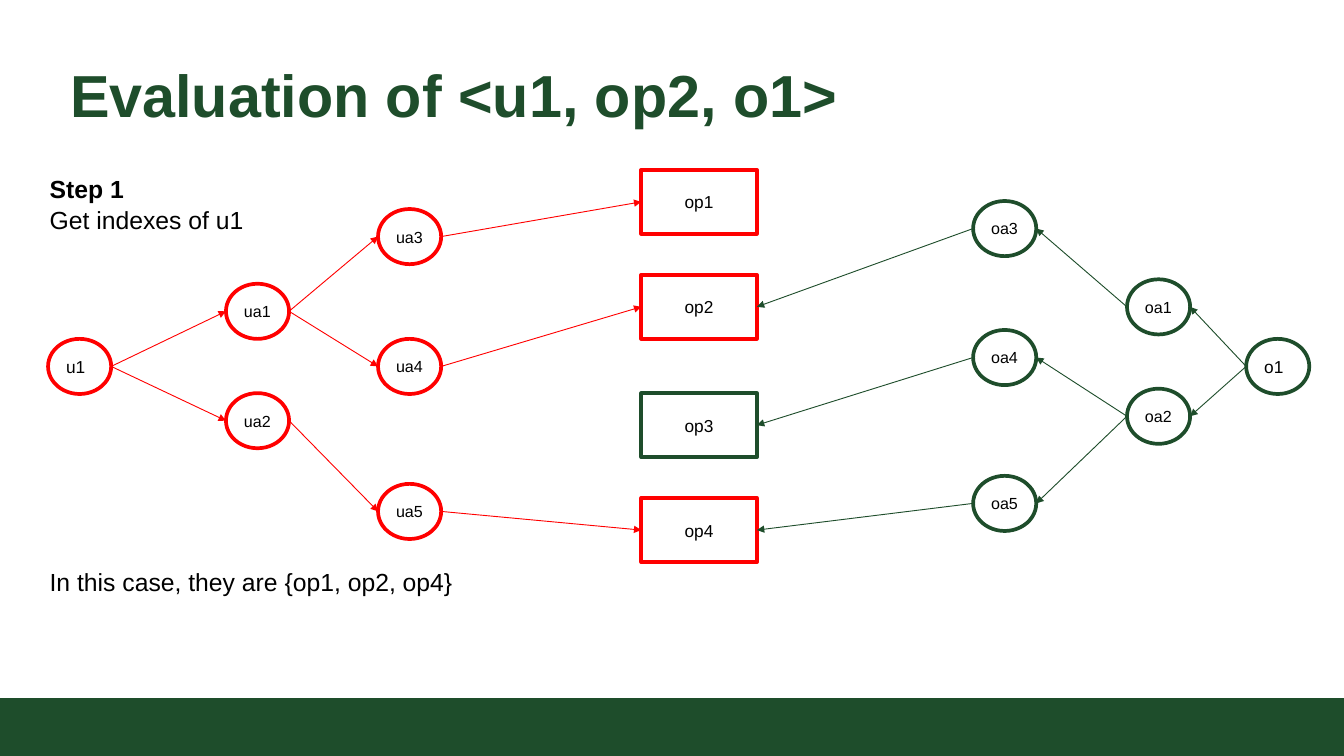
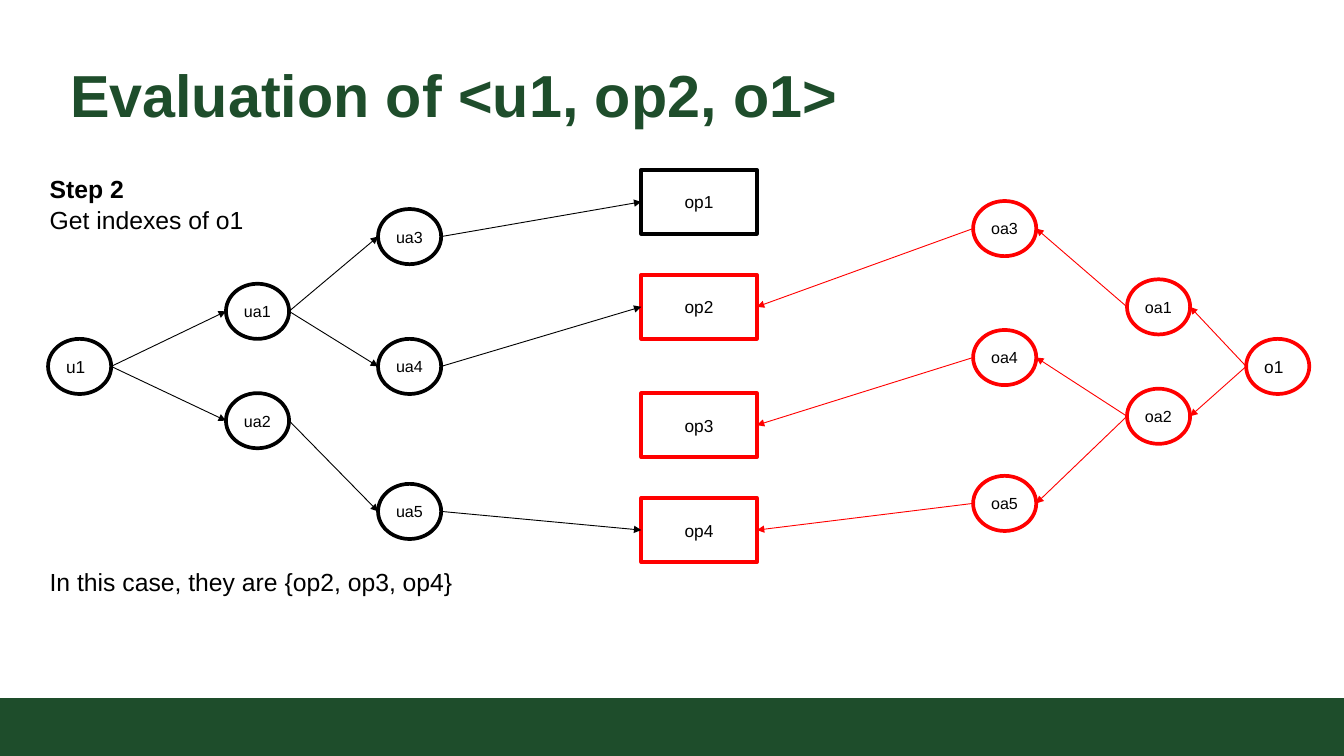
"""Build two slides that trace the access graph from u1 and from o1."""
from lxml import etree
from pptx import Presentation
from pptx.dml.color import RGBColor
from pptx.enum import shapes, text
from pptx.oxml.ns import qn
from pptx.util import Inches, Pt

HUES = {"green": "1E4D2B", "red": "FF0000", "black": "000000"}
FACE = "Arial"
WIDE, HIGH = 15.11, 8.5
BAND = 7.85
TITLE = "Evaluation of <u1, op2, o1>"
STEPS = [
    {"name": "Step 1", "root": "u1", "ops": ["op1", "op2", "op4"], "rest": "green"},
    {"name": "Step 2", "root": "o1", "ops": ["op2", "op3", "op4"], "rest": "black"},
]

NODE, BOX = (0.71, 0.62), (1.3, 0.72)
COLS = [
    ("u1", 0.54, {"u1": 3.81}),
    ("u1", 2.54, {"ua1": 3.19, "ua2": 4.42}),
    ("u1", 4.25, {"ua3": 2.35, "ua4": 3.81, "ua5": 5.44}),
    ("o1", 14.01, {"o1": 3.81}),
    ("o1", 12.67, {"oa1": 3.14, "oa2": 4.37}),
    ("o1", 10.94, {"oa3": 2.26, "oa4": 3.71, "oa5": 5.35}),
    ("op", 7.21, {"op1": 1.91, "op2": 3.09, "op3": 4.42, "op4": 5.6}),
]
LINKS = {
    "u1": ["u1 ua1", "u1 ua2", "ua1 ua3", "ua1 ua4", "ua2 ua5",
           "ua3 op1", "ua4 op2", "ua5 op4"],
    "o1": ["o1 oa1", "o1 oa2", "oa1 oa3", "oa2 oa5", "oa2 oa4",
           "oa4 op3", "oa5 op4", "oa3 op2"],
}
SPOTS = {name: (x, y, *(BOX if side == "op" else NODE))
         for side, x, rows in COLS for name, y in rows.items()}


def paint(hue):
    return RGBColor.from_string(HUES[hue])


def write(shape, lines, size, hue="black", anchor="TOP", align="LEFT", space=1.0, right=0.1):
    """Fill a shape with (words, bold) lines."""
    frame = shape.text_frame
    look = {"word_wrap": True, "vertical_anchor": getattr(text.MSO_ANCHOR, anchor),
            "margin_left": Inches(0.1), "margin_right": Inches(right),
            "margin_top": Inches(0.1), "margin_bottom": Inches(0.1)}
    for key, value in look.items():
        setattr(frame, key, value)
    for i, (words, bold) in enumerate(lines):
        para = frame.add_paragraph() if i else frame.paragraphs[0]
        para.alignment = getattr(text.PP_ALIGN, align)
        para.line_spacing = space
        run = para.add_run()
        run.text = words
        for key, value in {"name": FACE, "size": Pt(size), "bold": bold}.items():
            setattr(run.font, key, value)
        run.font.color.rgb = paint(hue)


def label(slide, spot, lines, size, **form):
    write(slide.shapes.add_textbox(*map(Inches, spot)), lines, size, **form)


def solid(slide, kind, spot):
    shape = slide.shapes.add_shape(kind, *map(Inches, spot))
    shape.shadow.inherit = False
    return shape


def base(deck):
    """Add a slide with the shared band and title."""
    slide = deck.slides.add_slide(deck.slide_layouts[6])
    band = solid(slide, shapes.MSO_SHAPE.RECTANGLE, (0, BAND, WIDE, HIGH - BAND))
    band.fill.solid()
    band.fill.fore_color.rgb = paint("green")
    band.line.fill.background()
    label(slide, (0.69, 0.44, 13.74, 1.11), [(TITLE, True)], 48,
          hue="green", anchor="BOTTOM")
    return slide


def vertex(slide, name, is_op, hue):
    kind = shapes.MSO_SHAPE.RECTANGLE if is_op else shapes.MSO_SHAPE.OVAL
    shape = solid(slide, kind, SPOTS[name])
    shape.fill.background()
    shape.line.color.rgb = paint(hue)
    shape.line.width = Pt(3)
    write(shape, [(name, False)], 13 if len(name) == 3 and not is_op else 14,
          anchor="MIDDLE", align="CENTER" if is_op else "LEFT",
          right=0.1 if is_op else 0.05)


def arrow(slide, link, hue):
    """Join the facing sides of two vertices."""
    (ax, ay, aw, ah), (bx, by, bw, bh) = (SPOTS[name] for name in link.split())
    start, end = (ax + aw, bx) if ax < bx else (ax, bx + bw)
    ends = (start, ay + ah / 2, end, by + bh / 2)
    line = slide.shapes.add_connector(shapes.MSO_CONNECTOR.STRAIGHT, *map(Inches, ends))
    line.line.color.rgb = paint(hue)
    line.line.width = Pt(0.75)
    etree.SubElement(line.line._get_or_add_ln(), qn("a:tailEnd"), type="triangle")
    etree.SubElement(line._element.spPr, qn("a:effectLst"))


def graph(slide, step):
    for side, _, rows in COLS:
        for name in rows:
            lit = name in step["ops"] or side == step["root"]
            vertex(slide, name, side == "op", "red" if lit else step["rest"])
    for side, links in LINKS.items():
        for link in links:
            arrow(slide, link, "red" if side == step["root"] else step["rest"])


def main():
    deck = Presentation()
    deck.slide_width, deck.slide_height = Inches(WIDE), Inches(HIGH)
    for step in STEPS:
        slide = base(deck)
        graph(slide, step)
        label(slide, (0.46, 1.84, 2.43, 0.88),
              [(step["name"], True), (f"Get indexes of {step['root']}", False)],
              20, space=1.05)
        found = ", ".join(step["ops"])
        label(slide, (0.46, 6.26, 5.33, 0.76),
              [(f"In this case, they are {{{found}}}", False)], 20, space=1.05)
    deck.save("out.pptx")


if __name__ == "__main__":
    main()
